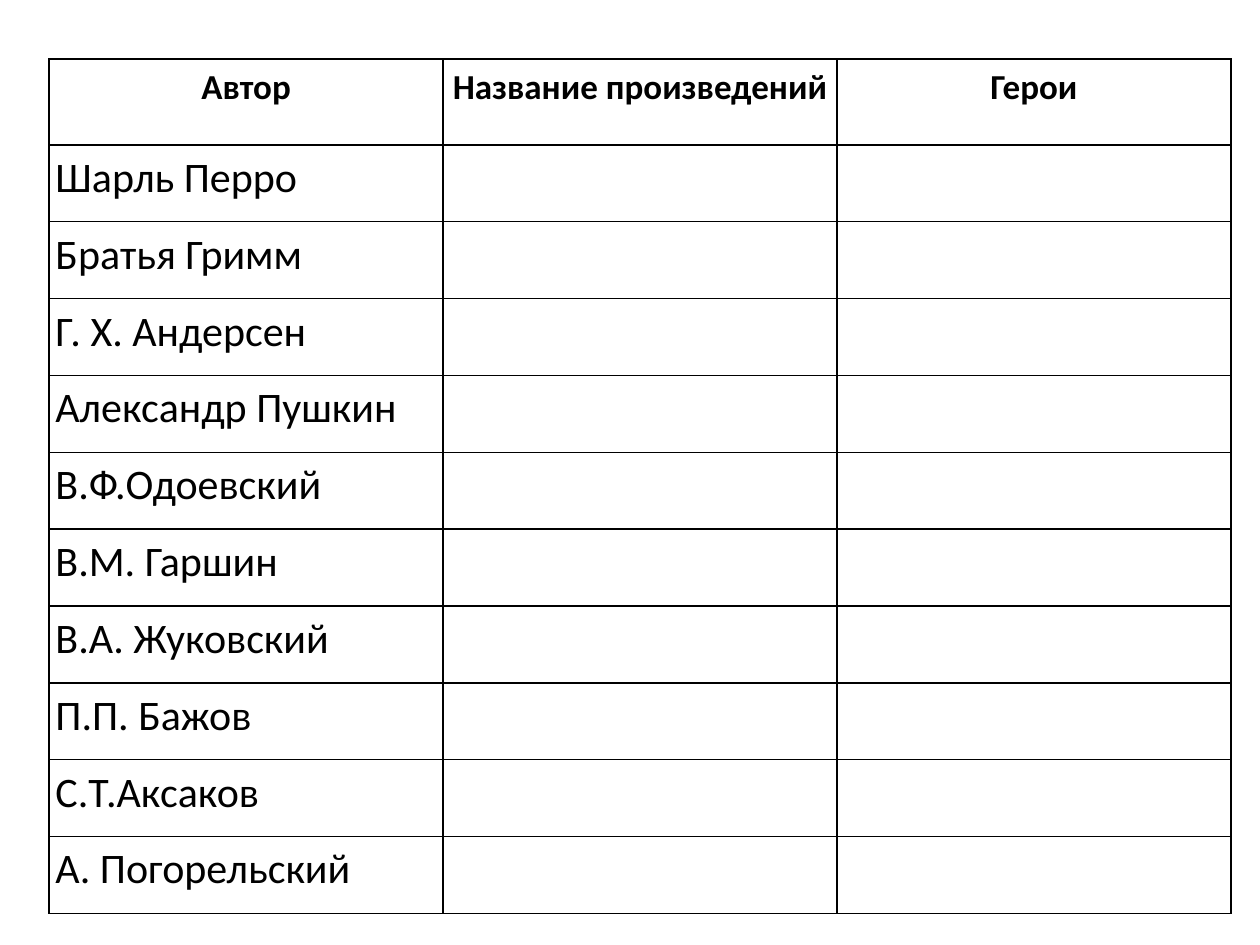
from dataclasses import dataclass

from lxml import etree
from pptx import Presentation
from pptx import util as u
from pptx.dml.color import RGBColor
from pptx.enum import text
from pptx.oxml import ns


@dataclass(frozen=True)
class Theme:
    font: str = "Calibri"
    ink: str = "000000"
    paper: str = "FFFFFF"
    header_size: int = 20
    body_size: int = 24
    line_spacing: float = 1.15
    border: float = 1


THEME = Theme()
HEADINGS = ["Автор", "Название произведений", "Герои"]
AUTHORS = [
    "Шарль Перро",
    "Братья Гримм",
    "Г. Х. Андерсен",
    "Александр Пушкин",
    "В.Ф.Одоевский",
    "В.М. Гаршин",
    "В.А. Жуковский",
    "П.П. Бажов",
    "С.Т.Аксаков",
    "А. Погорельский",
]
HEADER_HEIGHT = u.Inches(0.68)
CELL_FORMAT = {
    "margin_left": u.Inches(0.05),
    "margin_right": u.Inches(0.05),
    "margin_top": 0,
    "margin_bottom": 0,
    "vertical_anchor": text.MSO_ANCHOR.TOP,
}


def apply_format(target, values):
    for name, value in values.items():
        setattr(target, name, value)


def add_borders(cell):
    properties = cell._tc.get_or_add_tcPr()
    for position, side in enumerate(("lnL", "lnR", "lnT", "lnB")):
        line = etree.Element(ns.qn(f"a:{side}"), w=str(u.Pt(THEME.border)))
        fill = etree.SubElement(line, ns.qn("a:solidFill"))
        etree.SubElement(fill, ns.qn("a:srgbClr"), val=THEME.ink)
        properties.insert(position, line)


def fill_cell(cell, words, is_header):
    apply_format(cell, CELL_FORMAT)
    cell.fill.background()
    add_borders(cell)
    if not words:
        return
    para = cell.text_frame.paragraphs[0]
    para.line_spacing = THEME.line_spacing
    para.alignment = text.PP_ALIGN.CENTER if is_header else text.PP_ALIGN.LEFT
    span = para.add_run()
    span.text = words
    size = THEME.header_size if is_header else THEME.body_size
    apply_format(span.font, {"name": THEME.font, "size": u.Pt(size), "bold": is_header})
    span.font.color.rgb = RGBColor.from_string(THEME.ink)


def add_author_table(page, left, top, width, height):
    records = [HEADINGS] + [[author, "", ""] for author in AUTHORS]
    table = page.shapes.add_table(
        len(records), len(HEADINGS), left, top, width, height
    ).table
    apply_format(table, {"first_row": False, "horz_banding": False})
    for column in table.columns:
        column.width = width // len(HEADINGS)
    body_height = (height - HEADER_HEIGHT) // len(AUTHORS)
    for index, (row, record) in enumerate(zip(table.rows, records)):
        row.height = body_height if index else HEADER_HEIGHT
        for cell, words in zip(row.cells, record):
            fill_cell(cell, words, index == 0)


def main():
    deck = Presentation()
    apply_format(
        deck, {"slide_width": u.Inches(10), "slide_height": u.Inches(7.5)}
    )
    page = deck.slides.add_slide(deck.slide_layouts[6])
    background = page.background.fill
    background.solid()
    background.fore_color.rgb = RGBColor.from_string(THEME.paper)
    add_author_table(
        page, u.Inches(0.39), u.Inches(0.47), u.Inches(9.38), u.Inches(6.78)
    )
    deck.save("out.pptx")


if __name__ == "__main__":
    main()
